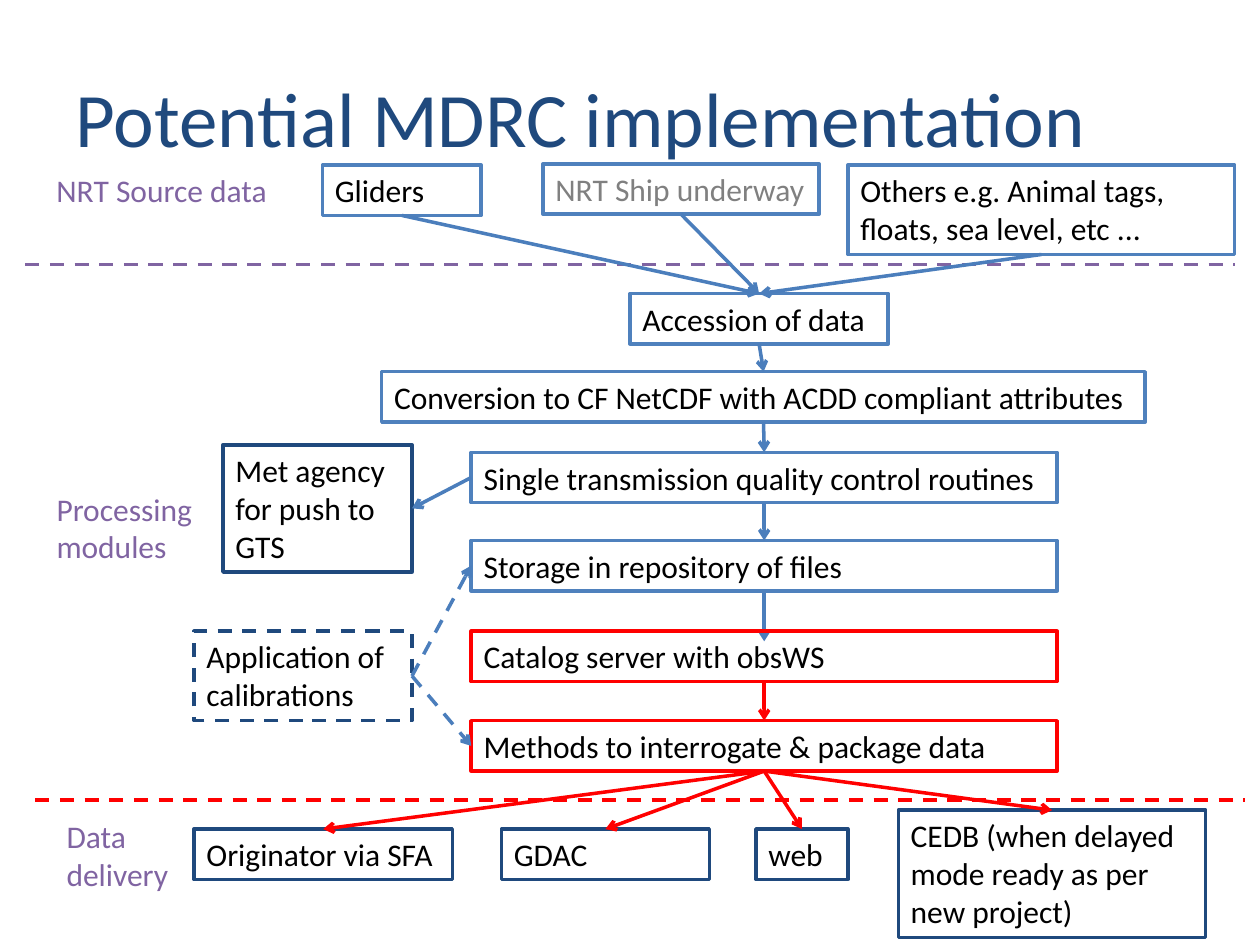
from lxml import etree
from pptx import Presentation
from pptx.dml.color import RGBColor
from pptx.enum import dml, shapes, text
from pptx.oxml import ns
from pptx.util import Inches, Pt

COLORS = {
    "navy": "1F497D", "blue": "4F81BD", "arrow": "4B7EBC", "red": "FF0000",
    "purple": "8064A2", "black": "000000", "grey": "808080",
}
FONT = "Calibri"
ROW = 0.4  # height of a one-line box
TOP, LEFT, BOTTOM, RIGHT = range(4)

# Labels: lines, left, top, width, height, size, color, wrap
LABELS = [
    (["Potential MDRC implementation"], 0.5, 0.3, 9, 1.25, 44, "navy", True),
    (["NRT Source data"], 0.35, 1.31, 1.97, ROW, 18, "purple", True),
    (["Processing", "modules"], 0.35, 3.83, 1.29, 0.71, 18, "purple", False),
    (["Data", "delivery"], 0.43, 6.43, 1.02, 0.71, 18, "purple", False),
]

# Boxes: key -> (wording, left, top, width, height, outline)
BOXES = {
    "gliders": ("Gliders", 2.56, 1.31, 1.26, ROW, "blue"),
    "ship": ("NRT Ship underway", 4.31, 1.3, 2.19, ROW, "blue"),
    "others": ("Others e.g. Animal tags, floats, sea level, etc ...",
               6.73, 1.31, 3.07, 0.71, "blue"),
    "accession": ("Accession of data", 5, 2.33, 2.05, ROW, "blue"),
    "conversion": ("Conversion to CF NetCDF with ACDD compliant attributes",
                   3.03, 2.95, 6.06, ROW, "blue"),
    "quality": ("Single transmission quality control routines",
                3.74, 3.59, 4.65, ROW, "blue"),
    "storage": ("Storage in repository of files", 3.74, 4.29, 4.65, ROW, "blue"),
    "server": ("Catalog server with obsWS", 3.74, 5.01, 4.65, ROW, "red"),
    "methods": ("Methods to interrogate & package data",
                3.74, 5.72, 4.65, ROW, "red"),
    "gts": ("Met agency for push to GTS", 1.77, 3.53, 1.5, 1.01, "navy"),
    "calibrations": ("Application of calibrations", 1.54, 5.01, 1.73, 0.71, "navy"),
    "originator": ("Originator via SFA", 1.54, 6.58, 2.05, ROW, "navy"),
    "gdac": ("GDAC", 3.98, 6.58, 1.65, ROW, "navy"),
    "web": ("web", 6, 6.58, 0.73, ROW, "navy"),
    "database": ("CEDB (when delayed mode ready as per new project)",
                 7.13, 6.43, 2.44, 1.01, "navy"),
}
TEXT_COLORS = {"ship": "grey"}
DASHED_BOXES = {"calibrations"}

# Flows: start box, side, end box, side, color, dashed
FLOWS = (
    [(source, BOTTOM, "accession", TOP, "arrow", False)
     for source in ("gliders", "ship", "others")]
    + [("accession", BOTTOM, "conversion", TOP, "arrow", False),
       ("conversion", BOTTOM, "quality", TOP, "arrow", False),
       ("quality", BOTTOM, "storage", TOP, "arrow", False),
       ("server", BOTTOM, "methods", TOP, "red", False),
       ("quality", LEFT, "gts", RIGHT, "arrow", False)]
    + [("calibrations", RIGHT, step, LEFT, "arrow", True)
       for step in ("storage", "methods")]
    + [("methods", BOTTOM, target, TOP, "red", False)
       for target in ("originator", "gdac", "web", "database")]
)

# Dividers: left, right, y, color
DIVIDERS = [(0.2, 9.8, 2.1, "purple"), (0.28, 9.88, 6.35, "red")]


def rgb(color):
    return RGBColor.from_string(COLORS[color])


def style_line(line, color, dashed=False):
    line.color.rgb = rgb(color)
    line.width = Pt(2)
    if dashed:
        line.dash_style = dml.MSO_LINE.DASH


def write(frame, lines, size, color, anchor, wrap=True):
    frame.word_wrap = wrap
    frame.vertical_anchor = anchor
    frame.text = "\n".join(lines)
    for paragraph in frame.paragraphs:
        paragraph.alignment = text.PP_ALIGN.LEFT
        paragraph.font.name = FONT
        paragraph.font.size = Pt(size)
        paragraph.font.color.rgb = rgb(color)


def add_line(slide, start, end, color, dashed=False, arrow=False):
    line = slide.shapes.add_connector(
        shapes.MSO_CONNECTOR.STRAIGHT, *map(Inches, start + end))
    style_line(line.line, color, dashed)
    properties = line._element.spPr
    if arrow:
        etree.SubElement(properties.find(ns.qn("a:ln")),
                         ns.qn("a:tailEnd"), type="arrow")
    etree.SubElement(properties, ns.qn("a:effectLst"))
    return line


def side_middle(key, side):
    _, left, top, width, height, _ = BOXES[key]
    return {
        TOP: (left + width / 2, top),
        LEFT: (left, top + height / 2),
        BOTTOM: (left + width / 2, top + height),
        RIGHT: (left + width, top + height / 2),
    }[side]


def main():
    deck = Presentation()
    deck.slide_width, deck.slide_height = Inches(10), Inches(7.5)
    slide = deck.slides.add_slide(deck.slide_layouts[6])

    # Title and section labels
    for lines, left, top, width, height, size, color, wrap in LABELS:
        label = slide.shapes.add_textbox(*map(Inches, (left, top, width, height)))
        write(label.text_frame, lines, size, color, text.MSO_ANCHOR.MIDDLE, wrap)

    # Section dividers
    for left, right, y, color in DIVIDERS:
        add_line(slide, (left, y), (right, y), color, dashed=True)

    # The arrow into the server ends just inside its box, so it lies behind it
    x, y = side_middle("server", TOP)
    into_server = add_line(slide, side_middle("storage", BOTTOM),
                           (x, y + 0.08), "arrow", arrow=True)

    # Process boxes
    boxes = {}
    for key, (wording, left, top, width, height, outline) in BOXES.items():
        box = slide.shapes.add_shape(
            shapes.MSO_SHAPE.RECTANGLE, *map(Inches, (left, top, width, height)))
        box.shadow.inherit = False
        box.fill.background()
        style_line(box.line, outline, key in DASHED_BOXES)
        write(box.text_frame, [wording], 18, TEXT_COLORS.get(key, "black"),
              text.MSO_ANCHOR.TOP)
        boxes[key] = box
    into_server.begin_connect(boxes["storage"], BOTTOM)

    # Flow arrows
    for source, out_side, target, in_side, color, dashed in FLOWS:
        flow = add_line(slide, side_middle(source, out_side),
                        side_middle(target, in_side), color, dashed, arrow=True)
        flow.begin_connect(boxes[source], out_side)
        flow.end_connect(boxes[target], in_side)

    deck.save("out.pptx")


if __name__ == "__main__":
    main()
